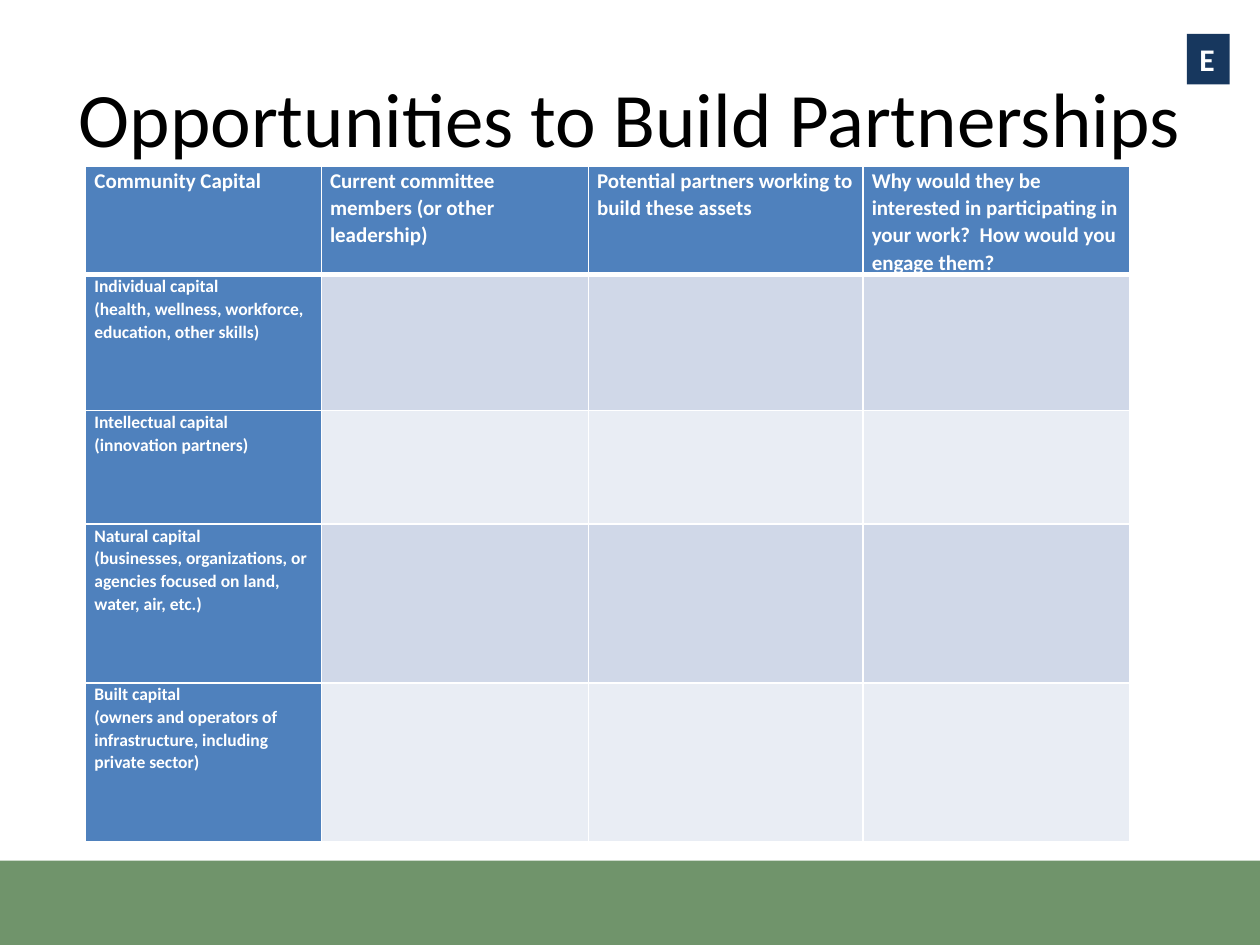
import pptx
import pptx.dml.color
import pptx.enum.shapes
import pptx.enum.text
import pptx.util
from lxml import etree
from pptx.oxml.ns import qn

Inches, Pt = pptx.util.Inches, pptx.util.Pt
RGB = pptx.dml.color.RGBColor
ALIGN = pptx.enum.text.PP_ALIGN
ANCHOR = pptx.enum.text.MSO_ANCHOR

# Content
TITLE = "Opportunities to Build Partnerships"
SECTION = "E"
HEADINGS = [
    "Community Capital",
    "Current committee members (or other leadership)",
    "Potential partners working to build these assets",
    "Why would they be interested in participating in your work?  How would you engage them?",
]
CAPITALS = [
    ("Individual capital", "(health, wellness, workforce, education, other skills)"),
    ("Intellectual capital", "(innovation partners)"),
    ("Natural capital",
     "(businesses, organizations, or agencies focused on land, water, air, etc.)"),
    ("Built capital",
     "(owners and operators of infrastructure, including private sector)"),
]

# Layout and style
WIDTH, HEIGHT = 10, 7.5
COLUMNS = [1.87, 2.12, 2.18, 2.12]
ROWS = [0.86, 1.08, 0.9, 1.26, 1.26]
FONT = "Calibri"
COLORS = {"band": "70946B", "badge": "17375E", "head": "4F81BD", "odd": "D0D8E8",
          "even": "E9EDF4", "white": "FFFFFF", "black": "000000"}


def color(name):
    return RGB.from_string(COLORS[name])


def paint(part, name):
    part.fill.solid()
    part.fill.fore_color.rgb = color(name)


def write(frame, *lines, size, ink="white", bold=False, align=ALIGN.LEFT, spacing=None):
    frame.word_wrap = True
    for index, line in enumerate(lines):
        paragraph = frame.add_paragraph() if index else frame.paragraphs[0]
        paragraph.alignment = align
        paragraph.line_spacing = spacing
        run = paragraph.add_run()
        run.text = line
        run.font.name, run.font.size, run.font.bold = FONT, Pt(size), bold
        run.font.color.rgb = color(ink)


def rule(cell, **widths):
    """Draw white borders; widths are in points, by side."""
    properties = cell._tc.get_or_add_tcPr()
    for side in "LRTB":
        line = etree.SubElement(properties, qn("a:ln" + side),
                                w=str(Pt(widths.get(side, 1))))
        fill = etree.SubElement(line, qn("a:solidFill"))
        etree.SubElement(fill, qn("a:srgbClr"), val=COLORS["white"])


deck = pptx.Presentation()
deck.slide_width, deck.slide_height = Inches(WIDTH), Inches(HEIGHT)
slide = deck.slides.add_slide(deck.slide_layouts[6])

# Footer band
band = slide.shapes.add_shape(pptx.enum.shapes.MSO_SHAPE.RECTANGLE, 0, Inches(6.83),
                              Inches(WIDTH), Inches(HEIGHT - 6.83))
band.shadow.inherit = False
paint(band, "band")
band.line.fill.background()

# Title
title = slide.shapes.add_textbox(Inches(0.5), Inches(0.3), Inches(WIDTH - 1), Inches(1.25))
title.text_frame.vertical_anchor = ANCHOR.MIDDLE
write(title.text_frame, TITLE, size=44, ink="black", align=ALIGN.CENTER)

# Partnership table
table = slide.shapes.add_table(len(ROWS), len(COLUMNS), Inches(0.68), Inches(1.32),
                               Inches(sum(COLUMNS)), Inches(sum(ROWS))).table
for column, width in zip(table.columns, COLUMNS):
    column.width = Inches(width)
for row, height in zip(table.rows, ROWS):
    row.height = Inches(height)

for r in range(len(ROWS)):
    for c in range(len(COLUMNS)):
        cell = table.cell(r, c)
        rule(cell, T=3 if r == 1 else 1, B=3 if r == 0 else 1)
        paint(cell, "head" if r == 0 or c == 0 else "odd" if r % 2 else "even")
        if r and c:
            continue
        cell.margin_left = cell.margin_right = Inches(0.07)
        cell.margin_top = cell.margin_bottom = 0
        lines = CAPITALS[r - 1] if r else [HEADINGS[c]]
        write(cell.text_frame, *lines, size=10 if r else 12, bold=True, spacing=1.07)

# Section badge
badge = slide.shapes.add_textbox(Inches(9.42), Inches(0.27), Inches(0.34), Inches(0.4))
paint(badge, "badge")
write(badge.text_frame, SECTION, size=18, bold=True)
badge.text_frame.word_wrap = False
badge.text_frame.auto_size = pptx.enum.text.MSO_AUTO_SIZE.SHAPE_TO_FIT_TEXT

deck.save("out.pptx")
